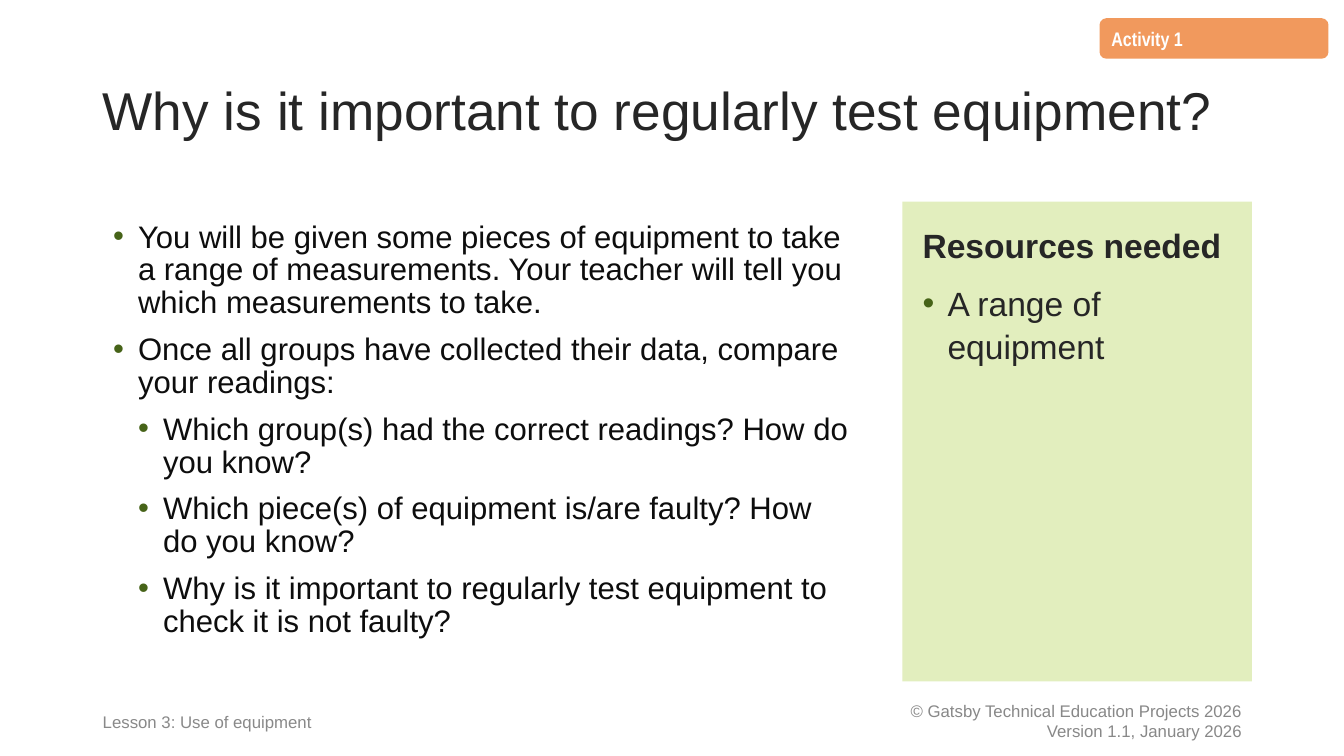
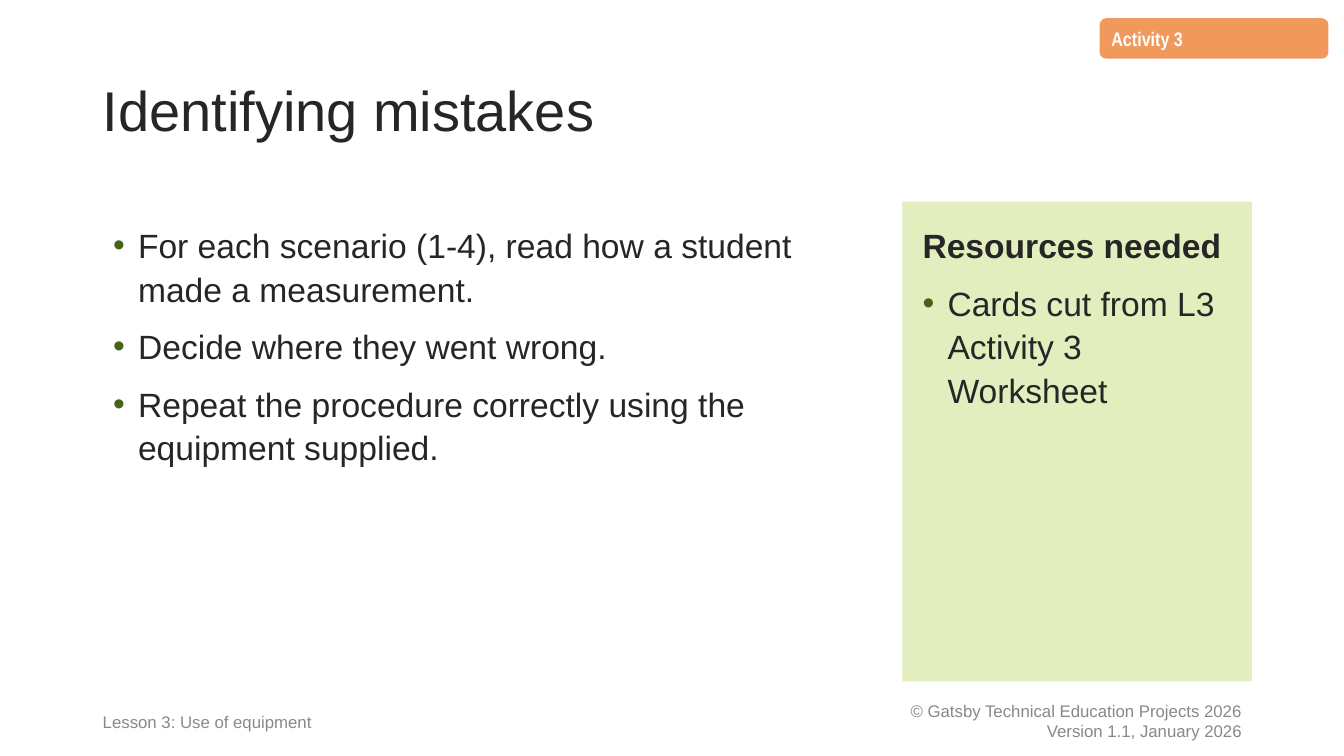
from dataclasses import dataclass

from lxml.etree import SubElement
from pptx import Presentation
from pptx.dml.color import RGBColor
from pptx.enum.shapes import MSO_SHAPE
from pptx.enum.text import MSO_ANCHOR, PP_ALIGN
from pptx.oxml.ns import qn
from pptx.util import Cm, Pt


@dataclass(frozen=True)
class Theme:
    # Colours
    ink: str = "262626"
    dark_ink: str = "0D0D0D"
    bullet: str = "466318"
    tag: str = "F1995D"
    panel: str = "E2EEBE"
    white: str = "FFFFFF"
    lesson: str = "898989"
    copyright: str = "888888"
    # Type
    font: str = "Arial"
    tag_font: str = "Arial Narrow"
    title_size: float = 40
    long_title_size: float = 38
    body_size: float = 24
    dense_size: float = 22.2
    tag_size: float = 14
    footer_size: float = 12
    # Spacing
    line: float = 1.08
    tight_line: float = 0.9
    dense_line: float = 0.88
    gap: float = 10


@dataclass(frozen=True)
class TextStyle:
    size: float
    color: str = Theme.ink
    font: str = Theme.font
    bold: bool = False
    line: float = Theme.line
    align: PP_ALIGN = PP_ALIGN.LEFT


THEME = Theme()
TITLE = TextStyle(THEME.title_size, line=THEME.tight_line)
LONG_TITLE = TextStyle(THEME.long_title_size, line=THEME.tight_line)
BODY = TextStyle(THEME.body_size)
DENSE_BODY = TextStyle(THEME.dense_size, THEME.dark_ink, line=THEME.dense_line)
HEADING = TextStyle(THEME.body_size, bold=True)
TAG = TextStyle(THEME.tag_size, THEME.white, THEME.tag_font, bold=True)
LESSON = TextStyle(THEME.footer_size, THEME.lesson)
COPYRIGHT = TextStyle(THEME.footer_size, THEME.copyright, line=1.0, align=PP_ALIGN.RIGHT)

# Page grid in centimetres
PAGE_WIDTH, PAGE_HEIGHT = 33.87, 19.05
LEFT, CONTENT_WIDTH = 2.34, 29.21
RIGHT = LEFT + CONTENT_WIDTH
PANEL_TOP, PANEL_HEIGHT, PANEL_INSET = 5.08, 12.09, 0.51
TASK_WIDTH, RESOURCES_WIDTH = 19.69, 8.81
FOOTER_TOP, FOOTER_HEIGHT = 17.65, 1.02
LESSON_WIDTH, COPYRIGHT_WIDTH = 11.68, 11.43
INDENT = 0.63

# Each task is (level, text)
ACTIVITIES = [
    {
        "tag": "Activity 1",
        "title": "Why is it important to regularly test equipment?",
        "title_style": LONG_TITLE,
        "task_style": DENSE_BODY,
        "tasks": [
            (0, "You will be given some pieces of equipment to take a range of "
                "measurements. Your teacher will tell you which measurements to take."),
            (0, "Once all groups have collected their data, compare your readings:"),
            (1, "Which group(s) had the correct readings? How do you know?"),
            (1, "Which piece(s) of equipment is/are faulty? How do you know?"),
            (1, "Why is it important to regularly test equipment to check it is not faulty?"),
        ],
        "resource": "A range of equipment",
    },
    {
        "tag": "Activity 3",
        "title": "Identifying mistakes",
        "title_style": TITLE,
        "task_style": BODY,
        "tasks": [
            (0, "For each scenario (1-4), read how a student made a measurement."),
            (0, "Decide where they went wrong."),
            (0, "Repeat the procedure correctly using the equipment supplied."),
        ],
        "resource": "Cards cut from L3 Activity 3 Worksheet",
    },
]


def set_frame(frame, anchor, inset_x=0.25, inset_y=0.13):
    frame.word_wrap = True
    frame.vertical_anchor = anchor
    frame.margin_left = frame.margin_right = Cm(inset_x)
    frame.margin_top = frame.margin_bottom = Cm(inset_y)
    return frame


def add_bullet(paragraph, level):
    properties = paragraph._p.get_or_add_pPr()
    properties.set("marL", str(Cm(INDENT * (level + 1))))
    properties.set("indent", str(-Cm(INDENT)))
    color = SubElement(properties, qn("a:buClr"))
    SubElement(color, qn("a:srgbClr"), val=THEME.bullet)
    SubElement(properties, qn("a:buFont"), typeface=THEME.font)
    SubElement(properties, qn("a:buChar"), char="•")


def write(frame, text, style, level=None, gap=0):
    """Fill the empty first paragraph, or add one after the last."""
    first = not frame.paragraphs[0].runs
    paragraph = frame.paragraphs[0] if first else frame.add_paragraph()
    if level is not None:
        add_bullet(paragraph, level)
    paragraph.alignment = style.align
    paragraph.line_spacing = style.line
    if gap and not first:
        paragraph.space_before = Pt(gap)
    run = paragraph.add_run()
    run.text = text
    run.font.name = style.font
    run.font.size = Pt(style.size)
    run.font.bold = style.bold
    run.font.color.rgb = RGBColor.from_string(style.color)


def add_text(slide, box, lines, style):
    frame = set_frame(slide.shapes.add_textbox(*map(Cm, box)).text_frame, MSO_ANCHOR.MIDDLE)
    for line in lines:
        write(frame, line, style)


def add_block(slide, kind, box, color):
    block = slide.shapes.add_shape(kind, *map(Cm, box))
    block.shadow.inherit = False
    block.fill.solid()
    block.fill.fore_color.rgb = RGBColor.from_string(color)
    block.line.fill.background()
    return block.text_frame


def add_panel(slide, left, width, color):
    box = (left, PANEL_TOP, width, PANEL_HEIGHT)
    frame = add_block(slide, MSO_SHAPE.RECTANGLE, box, color)
    return set_frame(frame, MSO_ANCHOR.TOP, PANEL_INSET, PANEL_INSET)


def add_tag(slide, label):
    box = (27.71, 0.46, 5.77, 1.02)
    frame = add_block(slide, MSO_SHAPE.FLOWCHART_ALTERNATE_PROCESS, box, THEME.tag)
    write(set_frame(frame, MSO_ANCHOR.TOP), label, TAG)


def add_footer(slide):
    add_text(slide, (LEFT, FOOTER_TOP, LESSON_WIDTH, FOOTER_HEIGHT),
             ["Lesson 3: Use of equipment"], LESSON)
    add_text(slide, (RIGHT - COPYRIGHT_WIDTH, FOOTER_TOP, COPYRIGHT_WIDTH, FOOTER_HEIGHT),
             ["© Gatsby Technical Education Projects 2026", "Version 1.1, January 2026"],
             COPYRIGHT)


def add_activity(deck, activity):
    slide = deck.slides.add_slide(deck.slide_layouts[6])

    # Tag and title
    add_tag(slide, activity["tag"])
    add_text(slide, (LEFT, 1.02, CONTENT_WIDTH, 3.68),
             [activity["title"]], activity["title_style"])

    # Tasks
    tasks = add_panel(slide, LEFT, TASK_WIDTH, THEME.white)
    for level, text in activity["tasks"]:
        write(tasks, text, activity["task_style"], level, THEME.gap)

    # Resources
    resources = add_panel(slide, RIGHT - RESOURCES_WIDTH, RESOURCES_WIDTH, THEME.panel)
    write(resources, "Resources needed", HEADING)
    write(resources, activity["resource"], BODY, 0, THEME.gap)

    add_footer(slide)


def main():
    deck = Presentation()
    deck.slide_width, deck.slide_height = Cm(PAGE_WIDTH), Cm(PAGE_HEIGHT)
    for activity in ACTIVITIES:
        add_activity(deck, activity)
    deck.save("out.pptx")


if __name__ == "__main__":
    main()
